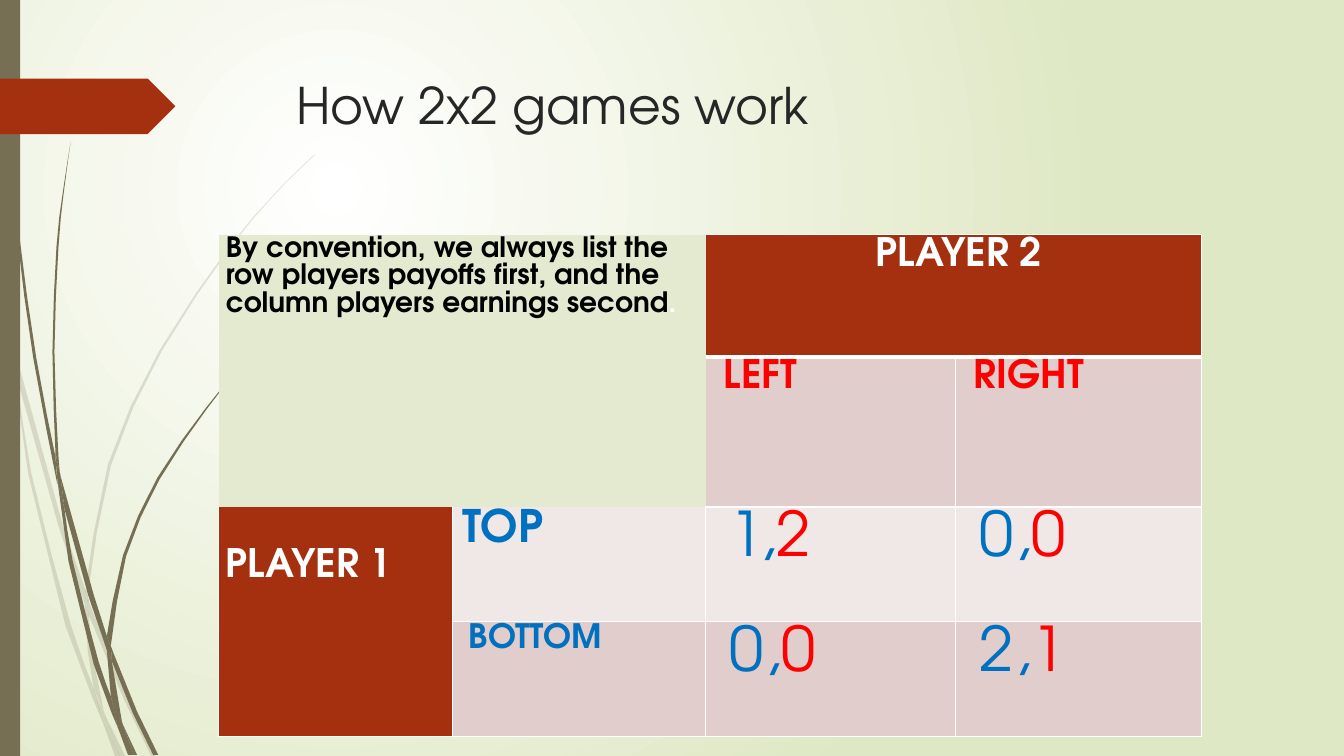
from lxml.etree import SubElement
from pptx import Presentation
from pptx.dml.color import RGBColor
from pptx.enum.shapes import MSO_SHAPE
from pptx.enum.text import PP_ALIGN
from pptx.oxml.ns import qn
from pptx.util import Inches, Pt

FONT = "TeX Gyre Adventor"
OLIVE, RUST, ROSE, PALE = "766F54", "A53010", "E1CDCC", "F0E8E7"
BLUE, RED, WHITE = "0070C0", "FF0000", "FFFFFF"


def paint(fill, colour, opacity=100):
    fill.solid()
    fill.fore_color.rgb = RGBColor.from_string(colour)
    if opacity < 100:
        tint = fill._xPr.find(".//" + qn("a:srgbClr"))
        SubElement(tint, qn("a:alpha"), val=str(opacity * 1000))


def write(frame, runs, size, bold=False, align=PP_ALIGN.LEFT, spacing=1.0, after=0):
    frame.word_wrap = True
    paragraph = frame.paragraphs[0]
    paragraph.alignment = align
    paragraph.line_spacing = spacing
    paragraph.space_after = Pt(after)
    for text, colour in runs:
        run = paragraph.add_run()
        run.text = text
        run.font.name, run.font.size, run.font.bold = FONT, Pt(size), bold
        run.font.color.rgb = RGBColor.from_string(colour)


presentation = Presentation()
presentation.slide_width, presentation.slide_height = Inches(13.33), Inches(7.5)
slide = presentation.slides.add_slide(presentation.slide_layouts[6])

# Background: radial glow centred in the upper left
background = slide.background.fill
background.gradient()
for stop, colour in zip(background.gradient_stops, (WHITE, "DFE8C4")):
    stop.color.rgb = RGBColor.from_string(colour)
gradient = slide.element.find(".//" + qn("a:gradFill"))
gradient.remove(gradient.find(qn("a:lin")))
glow = SubElement(gradient, qn("a:path"), path="circle")
SubElement(glow, qn("a:fillToRect"), l="50000", t="50000", r="100000", b="100000")

# Grass blades: each has two edges running from end to end
faint_blades = [
    ([(0.11, 3.5), (0.09, 3.22), (0, 2.82)], [(0, 2.99), (0.1, 3.44), (0.11, 3.5)]),
    ([(0.14, 3.45), (0.62, 5.2), (0.85, 5.86)],
     [(0.84, 5.99), (0.58, 5.22), (0.17, 3.76)]),
    ([(0.88, 5.96), (0.92, 6.07), (1.27, 6.92), (1.55, 7.5)],
     [(1.5, 7.5), (1.23, 6.94), (0.88, 6.1)]),
    ([(1.05, 7.11), (1.24, 7.5)], [(1.19, 7.5), (1.05, 7.11)]),
    ([(0.11, 3.5), (0.17, 3.76), (0.31, 4.69), (0.7, 6.19), (0.93, 6.83), (1.01, 7.14)],
     [(0.92, 6.93), (0.65, 6.21), (0.28, 4.7), (0.11, 3.5)]),
    ([(0.84, 5.99), (0.87, 6.46), (0.93, 6.83), (1.05, 7.11)],
     [(1.03, 7.06), (0.91, 6.46), (0.88, 6.08), (0.84, 5.99)]),
    ([(0.88, 5.96), (0.88, 5.84), (1.1, 4.62), (1.6, 3.49), (2.29, 2.45), (2.68, 1.98),
      (2.9, 1.75), (3.12, 1.54)],
     [(3.12, 1.53), (2.89, 1.75), (2.68, 1.97), (2.28, 2.44), (1.58, 3.48), (1.07, 4.61),
      (0.85, 5.84), (0.85, 5.86)]),
    ([(1.01, 7.14), (1.14, 7.5)], [(1.19, 7.5), (1.01, 7.14)]),
    ([(0.85, 5.86), (0.88, 5.96), (0.88, 6.1)], [(0.88, 6.08), (0.84, 5.99)]),
    ([(0.93, 6.83), (0.96, 6.92), (1.05, 7.11), (1.19, 7.5)],
     [(1.19, 7.5), (1.01, 7.14), (0.93, 6.83)]),
]
dark_blades = [
    ([(0.03, 0), (0.04, 0.48), (0.07, 1.1), (0.17, 2.33), (0.33, 3.55), (0.57, 4.81)],
     [(0.55, 4.53), (0.36, 3.55), (0.19, 2.32), (0.08, 1.09), (0.05, 0.48), (0.04, 0)]),
    ([(0.6, 4.72), (0.93, 5.9), (1.06, 6.31)],
     [(1.06, 6.45), (0.88, 5.92), (0.64, 5.05)]),
    ([(1.1, 6.41), (1.13, 6.49), (1.36, 7.06), (1.57, 7.49)],
     [(1.52, 7.49), (1.32, 7.08), (1.11, 6.56)]),
    ([(0.57, 4.77), (0.64, 5.05), (0.72, 5.56), (0.98, 6.57), (1.1, 6.91), (1.17, 7.22)],
     [(1.11, 7.08), (0.93, 6.59), (0.68, 5.57), (0.57, 4.77)]),
    ([(0.7, 1.41), (0.63, 1.93), (0.58, 2.45), (0.54, 3.49), (0.58, 4.53), (0.6, 4.72)],
     [(0.55, 4.49), (0.52, 3.49), (0.56, 2.45), (0.62, 1.93), (0.7, 1.41)]),
    ([(1.22, 7.19), (1.36, 7.49)], [(1.33, 7.49), (1.22, 7.19)]),
    ([(0.55, 4.49), (0.6, 4.72), (0.64, 5.05)], [(0.57, 4.77), (0.55, 4.53)]),
    ([(1.06, 6.31), (1.22, 5.51), (1.56, 4.74), (2.04, 4.05), (2.31, 3.73), (2.6, 3.44)],
     [(2.61, 3.44), (2.31, 3.74), (2.05, 4.06), (1.58, 4.76), (1.25, 5.52), (1.11, 6.33),
      (1.1, 6.41)]),
    ([(1.17, 7.22), (1.31, 7.49)], [(1.27, 7.49), (1.17, 7.22)]),
    ([(1.06, 6.45), (1.11, 6.56), (1.21, 7.16), (1.22, 7.19)],
     [(1.16, 7.06), (1.1, 6.91), (1.06, 6.45)]),
    ([(1.06, 6.31), (1.1, 6.41), (1.11, 6.56)], [(1.06, 6.45), (1.06, 6.31)]),
    ([(1.1, 6.91), (1.22, 7.19), (1.33, 7.49)],
     [(1.3, 7.49), (1.17, 7.22), (1.1, 6.91)]),
]
for blades, opacity in ((faint_blades, 20), (dark_blades, 100)):
    for edges in blades:
        outline = []
        for edge in edges:
            # Catmull-Rom curve through the points; only long edges need midpoints
            steps = 2 if len(edge) > 4 else 1
            knots = [edge[0], *edge, edge[-1]]
            for before, start, end, beyond in zip(knots, knots[1:], knots[2:], knots[3:]):
                for step in range(steps):
                    t = step / steps
                    outline.append(tuple(
                        Inches(b + 0.5 * t * (c - a + t * (2 * a - 5 * b + 4 * c - d
                                                           + t * (3 * (b - c) + d - a))))
                        for a, b, c, d in zip(before, start, end, beyond)))
            outline.append(tuple(Inches(value) for value in edge[-1]))
        builder = slide.shapes.build_freeform(*outline[0])
        builder.add_line_segments(outline[1:], close=True)
        blade = builder.convert_to_shape()
        paint(blade.fill, OLIVE, opacity)
        blade.line.fill.background()
        blade.shadow.inherit = False

# Side bar and arrow tag
for preset, top, width, height, colour in (
    (MSO_SHAPE.RECTANGLE, 0, 0.2, 7.5, OLIVE),
    (MSO_SHAPE.PENTAGON, 0.78, 1.74, 0.55, RUST),
):
    shape = slide.shapes.add_shape(preset, 0, Inches(top), Inches(width), Inches(height))
    paint(shape.fill, colour)
    shape.line.fill.background()
    shape.shadow.inherit = False

# Title
title = slide.shapes.add_textbox(Inches(2.84), Inches(0.69), Inches(9.75), Inches(1.4))
write(title.text_frame, [("How 2x2 games work", "262626")], 36)

# Payoff table
table = slide.shapes.add_table(
    4, 4, Inches(2.17), Inches(2.33), Inches(9.75), Inches(4.97)).table
table.first_row = table.horz_banding = False
for column, width in zip(table.columns, (2.32, 2.51, 2.48, 2.44)):
    column.width = Inches(width)
for row, height in zip(table.rows, (1.21, 1.49, 1.14, 1.14)):
    row.height = Inches(height)

convention = ("By convention, we always list the row players payoffs first, "
              "and the column players earnings second")
# row, column, last row, last column, fill, borders, indent, size, bold, runs
cells = [
    (0, 0, 1, 1, "E3EACF", "", 0, 20, True, [(convention, "000000"), (".", WHITE)]),
    (0, 2, 0, 3, RUST, "RTB", 0.1, 28, True, [("PLAYER 2", WHITE)]),
    (1, 2, 1, 2, ROSE, "RTB", 0.11, 28, True, [("LEFT", RED)]),
    (1, 3, 1, 3, ROSE, "LRTB", 0.11, 28, True, [("RIGHT", RED)]),
    (2, 0, 3, 0, RUST, "LRB", 0, 28, True, [("PLAYER 1", WHITE)]),
    (2, 1, 2, 1, PALE, "LRB", 0.03, 32, True, [("TOP", BLUE)]),
    (3, 1, 3, 1, ROSE, "LRTB", 0.09, 24, True, [("BOTTOM", BLUE)]),
]
payoffs = [[("1", "2"), ("0", "0")], [("0", "0"), ("2", "1")]]
for row, (pairs, fill) in enumerate(zip(payoffs, (PALE, ROSE)), 2):
    for column, (first, second) in enumerate(pairs, 2):
        cells.append((row, column, row, column, fill, "LRTB", 0.17, 44, False,
                      [(first + ",", BLUE), (second, RED)]))

for top, left, bottom, right, fill, borders, indent, size, bold, runs in cells:
    cell = table.cell(top, left)
    if (top, left) != (bottom, right):
        cell.merge(table.cell(bottom, right))
    is_header = runs[0][0] == "PLAYER 2"
    for row in range(top, bottom + 1):
        for column in range(left, right + 1):
            part = table.cell(row, column)
            properties = part._tc.get_or_add_tcPr()
            for side in "LRTB":
                thick = side == "B" and is_header or side == "T" and row == 1 and column > 1
                line = SubElement(properties, qn("a:ln" + side), w=str(Pt(3 if thick else 1)))
                if side in borders:
                    solid = SubElement(line, qn("a:solidFill"))
                    SubElement(solid, qn("a:srgbClr"), val=WHITE)
                else:
                    SubElement(line, qn("a:noFill"))
            paint(part.fill, fill)
    cell.margin_left, cell.margin_right = Inches(0.07 + indent), Inches(0.07)
    cell.margin_top = Inches(0.39 if runs[0][0] == "PLAYER 1" else 0)
    cell.margin_bottom = 0
    write(cell.text_frame, runs, size, bold,
          PP_ALIGN.CENTER if is_header else PP_ALIGN.LEFT, spacing=1.07, after=8)

presentation.save("out.pptx")
